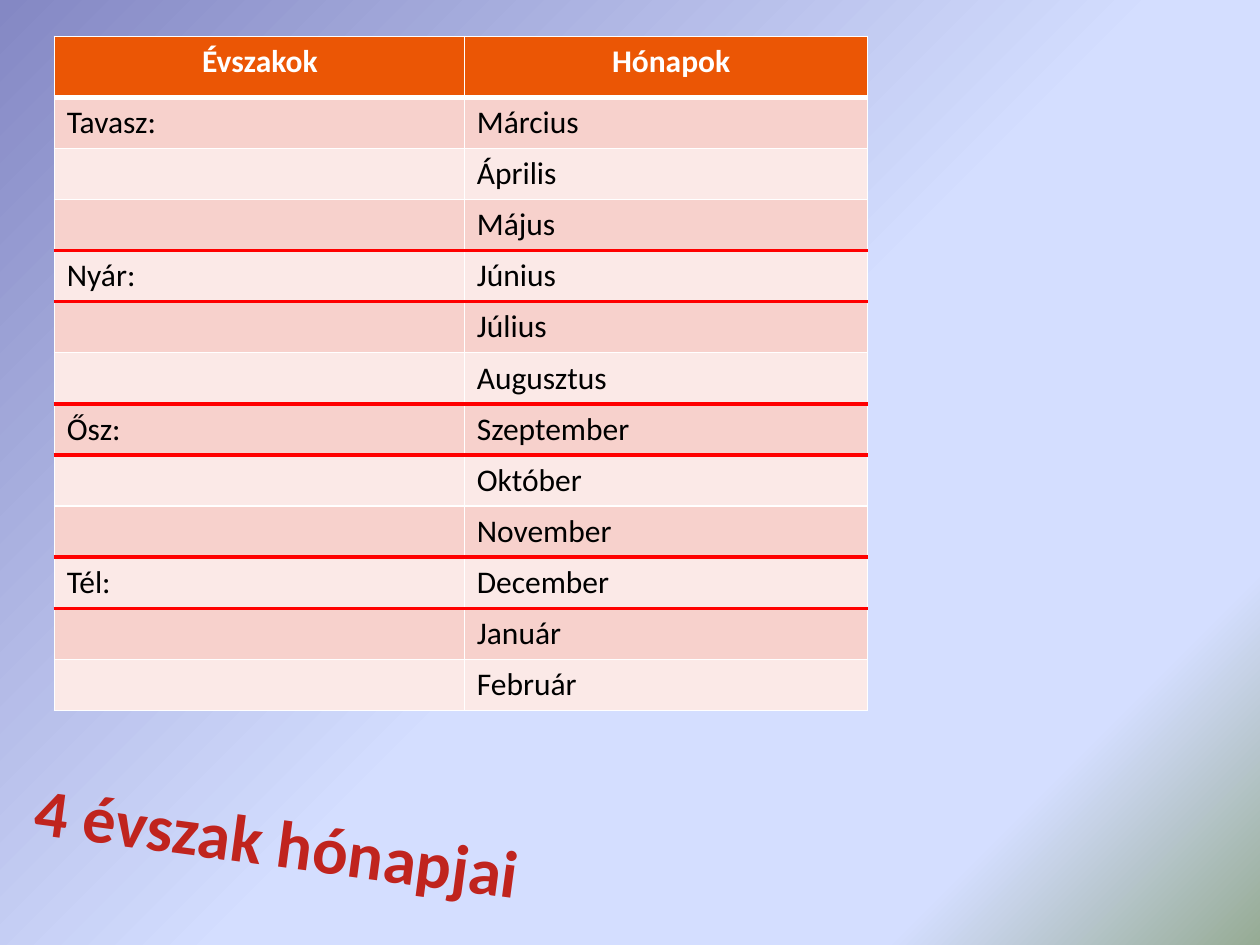
"""Build a slide with a table of the months in each season."""
from lxml.etree import SubElement
from pptx import Presentation
from pptx.dml.color import RGBColor
from pptx.enum.text import MSO_ANCHOR
from pptx.oxml.ns import qn
from pptx.util import Pt

TITLE = "4 évszak hónapjai"
HEADINGS = ("Évszakok", "Hónapok")
SEASONS = {
    "Tavasz:": ("Március", "Április", "Május"),
    "Nyár:": ("Június", "Július", "Augusztus"),
    "Ősz:": ("Szeptember", "Október", "November"),
    "Tél:": ("December", "Január", "Február"),
}
COLORS = {
    "header": "EB5605", "odd": "F7D1CC", "even": "FBE9E7", "grid": "FFFFFF",
    "divider": "FF0000", "heading": "FFFFFF", "body": "000000", "title": "C0241E",
}
BACKGROUND = ((0, "8488C4"), (53, "D4DEFF"), (83, "D4DEFF"), (100, "96AB94"))
FONT = "Calibri"
COLUMN_WIDTHS = (234.3, 230.5)
HEADER_HEIGHT, MONTH_HEIGHT = 34.8, 29.2
HEADING_INDENT = 84.5
GRID, DIVIDER, HEADER_RULE = ("grid", 1), ("divider", 2.25), ("grid", 3)


def paint_background(slide):
    fill = slide.background.fill
    fill.gradient()
    fill.gradient_angle = 315
    stops = slide.element.find(".//" + qn("a:gsLst"))
    for stop in list(stops):
        stops.remove(stop)
    for position, color in BACKGROUND:
        stop = SubElement(stops, qn("a:gs"), pos=str(position * 1000))
        SubElement(stop, qn("a:srgbClr"), val=color)


def style_font(font, size, color, bold):
    font.name, font.size, font.bold = FONT, Pt(size), bold
    font.color.rgb = RGBColor.from_string(COLORS[color])


def set_borders(cell, top, bottom):
    properties = cell._tc.get_or_add_tcPr()
    for side, (color, width) in zip("LRTB", (GRID, GRID, top, bottom)):
        line = SubElement(properties, qn(f"a:ln{side}"), w=str(int(Pt(width))))
        fill = SubElement(line, qn("a:solidFill"))
        SubElement(fill, qn("a:srgbClr"), val=COLORS[color])


def rule_below(row):
    if row == 0:
        return HEADER_RULE
    return DIVIDER if 3 <= row < 12 and row % 3 != 2 else GRID


def add_months(slide):
    rows = [HEADINGS] + [
        (season if place == 0 else "", month)
        for season, months in SEASONS.items()
        for place, month in enumerate(months)
    ]
    height = HEADER_HEIGHT + MONTH_HEIGHT * (len(rows) - 1)
    table = slide.shapes.add_table(
        len(rows), len(HEADINGS), Pt(31), Pt(20.8), Pt(sum(COLUMN_WIDTHS)), Pt(height)
    ).table
    table.horz_banding = False
    for column, width in zip(table.columns, COLUMN_WIDTHS):
        column.width = Pt(width)
    for r, texts in enumerate(rows):
        header = r == 0
        table.rows[r].height = Pt(HEADER_HEIGHT if header else MONTH_HEIGHT)
        band = "header" if header else "odd" if r % 2 else "even"
        for c, text in enumerate(texts):
            cell = table.cell(r, c)
            set_borders(cell, GRID if header else rule_below(r - 1), rule_below(r))
            cell.fill.solid()
            cell.fill.fore_color.rgb = RGBColor.from_string(COLORS[band])
            if header:
                cell.margin_left = Pt(HEADING_INDENT)
            cell.text_frame.text = text
            style_font(cell.text_frame.paragraphs[0].font, 18,
                       "heading" if header else "body", header)
            for run in cell.text_frame.paragraphs[0].runs:
                style_font(run.font, 18, "heading" if header else "body", header)


def add_title(slide):
    title = slide.shapes.add_textbox(Pt(17.3), Pt(432), Pt(570.2), Pt(90))
    title.rotation = 7.6
    frame = title.text_frame
    frame.word_wrap = True
    frame.vertical_anchor = MSO_ANCHOR.BOTTOM
    frame.margin_left = frame.margin_right = Pt(3.6)
    frame.margin_top = frame.margin_bottom = 0
    frame.text = TITLE
    style_font(frame.paragraphs[0].runs[0].font, 38, "title", True)


def main():
    presentation = Presentation()
    presentation.slide_width, presentation.slide_height = Pt(720), Pt(540)
    slide = presentation.slides.add_slide(presentation.slide_layouts[6])
    paint_background(slide)
    add_title(slide)
    add_months(slide)
    presentation.save("out.pptx")


if __name__ == "__main__":
    main()
